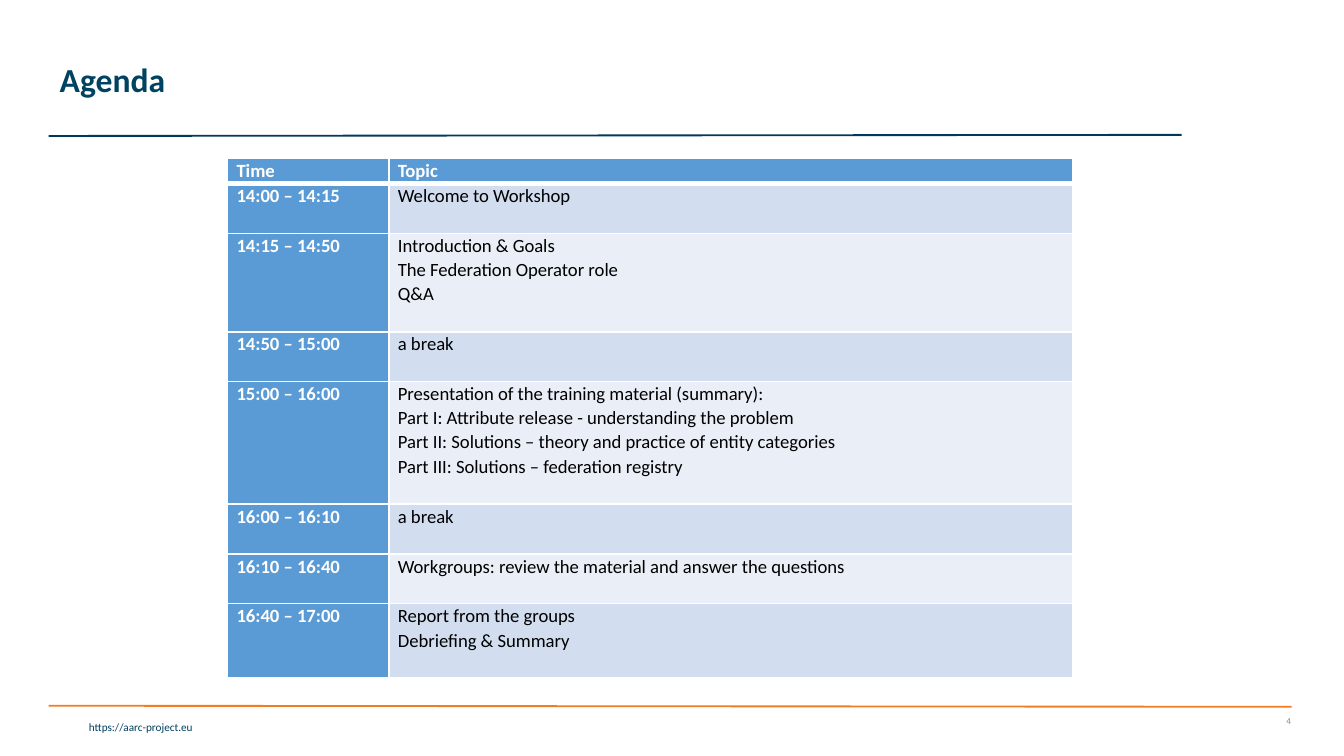
from lxml import etree
from pptx import Presentation
from pptx.dml.color import RGBColor
from pptx.enum.shapes import MSO_CONNECTOR
from pptx.enum.text import MSO_ANCHOR, PP_ALIGN
from pptx.oxml.ns import qn
from pptx.util import Cm, Pt

STRAIGHT = MSO_CONNECTOR.STRAIGHT
TOP, MIDDLE = MSO_ANCHOR.TOP, MSO_ANCHOR.MIDDLE
LEFT, RIGHT = PP_ALIGN.LEFT, PP_ALIGN.RIGHT

COLORS = {
    "navy": "003959", "title": "004361", "link": "003F5E",
    "orange": "F57B20", "gray": "8C8C8C", "white": "FFFFFF",
    "black": "000000", "blue": "5B9BD5", "dark": "D2DEEF", "light": "EAEFF7",
}
FONTS = {
    "title": {"size": Pt(18), "bold": True, "name": "Calibri"},
    "head": {"size": Pt(10), "bold": True, "name": "Calibri"},
    "topic": {"size": Pt(10), "bold": False, "name": "Calibri"},
    "link": {"size": Pt(6), "bold": False, "name": "Calibri"},
    "number": {"size": Pt(5), "bold": False, "name": "Calibri"},
}
AGENDA = [
    ("14:00 – 14:15", ["Welcome to Workshop"]),
    ("14:15 – 14:50", ["Introduction & Goals",
                       "The Federation Operator role", "Q&A"]),
    ("14:50 – 15:00", ["a break"]),
    ("15:00 – 16:00", ["Presentation of the training material (summary):",
                       "Part I: Attribute release - understanding the problem",
                       "Part II: Solutions – theory and practice of entity categories",
                       "Part III: Solutions – federation registry"]),
    ("16:00 – 16:10", ["a break"]),
    ("16:10 – 16:40", ["Workgroups: review the material and answer the questions"]),
    ("16:40 – 17:00", ["Report from the groups", "Debriefing & Summary"]),
]
COLS = (3.05, 12.93)
LINE, PAD = 0.46, 0.02


def rgb(name):
    return RGBColor.from_string(COLORS[name])


def write(frame, lines, font, color, align=LEFT, space=1.0):
    for i, line in enumerate(lines):
        par = frame.paragraphs[0] if i == 0 else frame.add_paragraph()
        par.alignment, par.line_spacing = align, space
        run = par.add_run()
        run.text = line
        for key, value in FONTS[font].items():
            setattr(run.font, key, value)
        run.font.color.rgb = rgb(color)


def add_text(slide, box, text, font, color, anchor=TOP, align=LEFT, space=1.0):
    frame = slide.shapes.add_textbox(*map(Cm, box)).text_frame
    form = {"word_wrap": True, "vertical_anchor": anchor,
            "margin_left": Cm(0.19), "margin_right": Cm(0.19),
            "margin_top": Cm(0.1), "margin_bottom": Cm(0.1)}
    for key, value in form.items():
        setattr(frame, key, value)
    write(frame, [text], font, color, align, space)


def add_rule(slide, ends, color):
    rule = slide.shapes.add_connector(STRAIGHT, *map(Cm, ends))
    rule.line.color.rgb = rgb(color)
    rule.line.width = Pt(1)
    etree.SubElement(rule._element.spPr, qn("a:effectLst"))


def add_edges(cell, below):
    """Draw white borders; the lower one is `below` points wide."""
    props = cell._tc.get_or_add_tcPr()
    for side, width in (("L", 1), ("R", 1), ("T", 1), ("B", below)):
        edge = etree.SubElement(props, qn(f"a:ln{side}"), w=str(Pt(width)))
        fill = etree.SubElement(edge, qn("a:solidFill"))
        etree.SubElement(fill, qn("a:srgbClr"), val=COLORS["white"])


def fill_cell(cell, lines, fill, font, color, below=1):
    form = {"margin_left": Cm(0.17), "margin_right": Cm(0.17),
            "margin_top": 0, "margin_bottom": 0, "vertical_anchor": TOP}
    for key, value in form.items():
        setattr(cell, key, value)
    add_edges(cell, below)
    cell.fill.solid()
    cell.fill.fore_color.rgb = rgb(fill)
    write(cell.text_frame, lines, font, color, space=1.07)


def add_agenda(slide):
    """Each row is one line taller than its topics."""
    sizes = [LINE + PAD] + [LINE * (len(topics) + 1) + PAD for _, topics in AGENDA]
    table = slide.shapes.add_table(
        len(sizes), len(COLS), Cm(4.3), Cm(2.99), Cm(sum(COLS)), Cm(sum(sizes))).table
    for col, width in zip(table.columns, COLS):
        col.width = Cm(width)
    for row, height in zip(table.rows, sizes):
        row.height = Cm(height)
    for i, label in enumerate(("Time", "Topic")):
        fill_cell(table.cell(0, i), [label], "blue", "head", "white", 3)
    for i, (time, topics) in enumerate(AGENDA, 1):
        fill_cell(table.cell(i, 0), [time], "blue", "head", "white")
        band = "dark" if i % 2 else "light"
        fill_cell(table.cell(i, 1), topics, band, "topic", "black")


def main():
    deck = Presentation()
    deck.slide_width, deck.slide_height = Cm(25.4), Cm(14.29)
    slide = deck.slides.add_slide(deck.slide_layouts[6])
    add_rule(slide, (0.92, 13.34, 24.41, 13.36), "orange")
    add_text(slide, (0.05, 13.51, 3.78, 0.46), "https://aarc-project.eu",
             "link", "link", align=RIGHT)
    add_rule(slide, (22.33, 2.55, 0.92, 2.57), "navy")
    add_agenda(slide)
    add_text(slide, (23.04, 13.34, 1.55, 0.58), "4", "number", "gray", MIDDLE, RIGHT)
    add_text(slide, (0.94, 0.15, 20.02, 2.77), "Agenda", "title", "title",
             MIDDLE, space=0.9)
    deck.save("out.pptx")


if __name__ == "__main__":
    main()
